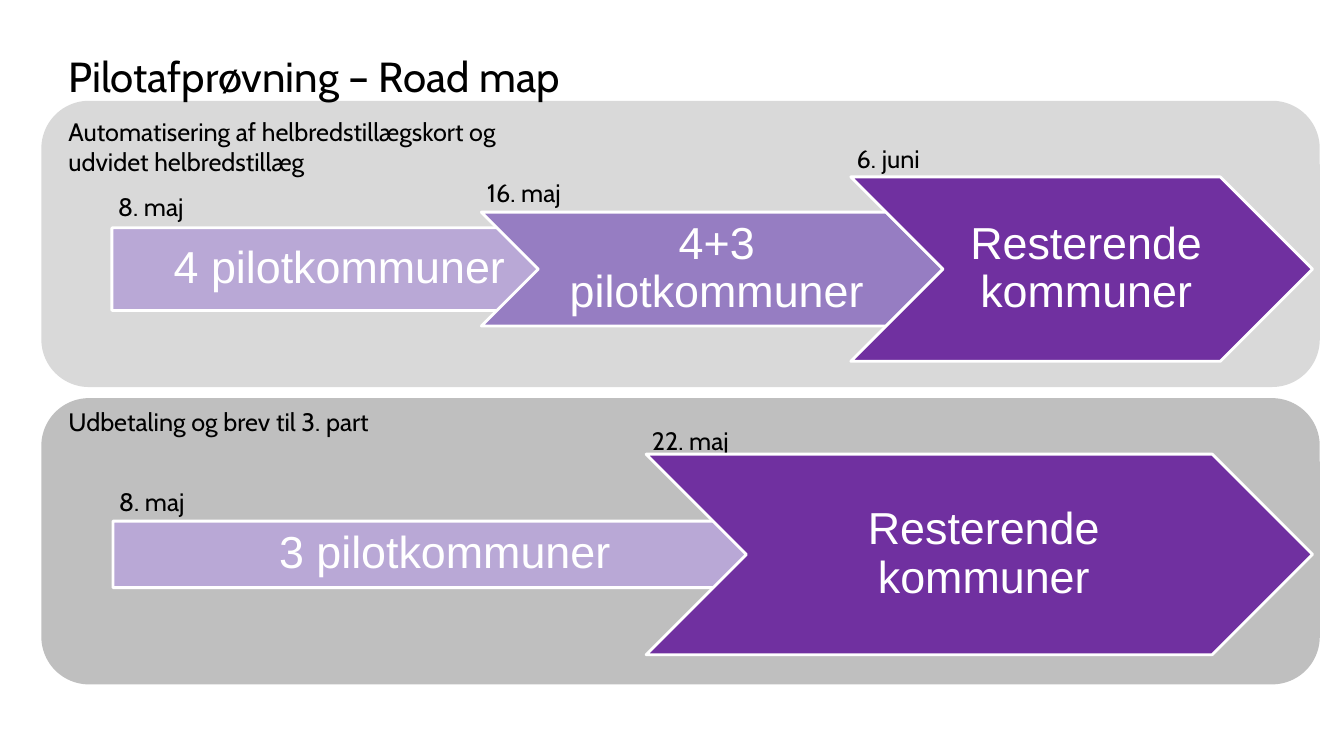
from dataclasses import dataclass

from pptx import Presentation
from pptx.dml.color import RGBColor
from pptx.enum.shapes import MSO_SHAPE as SHAPE
from pptx.enum.text import MSO_ANCHOR as ANCHOR, PP_ALIGN as ALIGN
from pptx.shapes.autoshape import Shape
from pptx.slide import Slide
from pptx.util import Inches, Pt

COLORS = {
    "black": "000000",
    "white": "FFFFFF",
    "light_gray": "D9D9D9",
    "gray": "BFBFBF",
    "lilac": "B9A8D6",
    "violet": "967DC2",
    "purple": "7030A0",
}
PANEL_LEFT, PANEL_W, PANEL_H = 0.41, 12.68, 2.84
STEP_RATIO = 0.8
DATE_SHIFT = -0.04


@dataclass
class Phase:
    text: str
    date: str
    date_top: float
    height: float
    color: str


@dataclass
class Track:
    title: str
    panel_top: float
    panel_color: str
    title_top: float
    title_h: float
    left: float
    middle: float
    phase_w: float
    phases: list[Phase]


TRACKS = [
    Track("Udbetaling og brev til 3. part", 3.95, "gray", 3.98, 0.4,
          1.12, 5.5, 6.61, [
              Phase("3 pilotkommuner", "8. maj", 4.78, 0.66, "lilac"),
              Phase("Resterende kommuner", "22. maj", 4.17, 1.99, "purple"),
          ]),
    Track("Automatisering af helbredstillægskort og udvidet helbredstillæg",
          1.0, "light_gray", 1.1, 0.71, 1.11, 2.67, 4.58, [
              Phase("4 pilotkommuner", "8. maj", 1.85, 0.82, "lilac"),
              Phase("4+3 pilotkommuner", "16. maj", 1.71, 1.13, "violet"),
              Phase("Resterende kommuner", "6. juni", 1.37, 1.83, "purple"),
          ]),
]


def rgb(name: str) -> RGBColor:
    return RGBColor.from_string(COLORS[name])


def style_text(sp: Shape, text: str, font: str, size: int, color: str) -> None:
    tf = sp.text_frame
    tf.word_wrap = True
    tf.text = text
    r = tf.paragraphs[0].runs[0]
    r.font.name = font
    r.font.size = Pt(size)
    r.font.color.rgb = rgb(color)


def add_label(s: Slide, text: str, left: float, top: float, width: float,
              height: float, size: int = 18) -> Shape:
    sp = s.shapes.add_textbox(*map(Inches, (left, top, width, height)))
    style_text(sp, text, "Cabin", size, "black")
    return sp


def add_block(s: Slide, kind: SHAPE, left: float, top: float, width: float,
              height: float, color: str) -> Shape:
    sp = s.shapes.add_shape(kind, *map(Inches, (left, top, width, height)))
    sp.shadow.inherit = False
    sp.fill.solid()
    sp.fill.fore_color.rgb = rgb(color)
    sp.line.fill.background()
    return sp


def add_phase(s: Slide, track: Track, index: int, phase: Phase) -> None:
    left = track.left + index * STEP_RATIO * track.phase_w
    add_label(s, phase.date, left + DATE_SHIFT, phase.date_top, 1.11, 0.4)
    kind = SHAPE.CHEVRON if index else SHAPE.PENTAGON
    sp = add_block(s, kind, left, track.middle - phase.height / 2,
                   track.phase_w, phase.height, phase.color)
    sp.line.color.rgb = rgb("white")
    sp.line.width = Pt(2)
    style_text(sp, phase.text, "Arial", 32, "white")
    tf = sp.text_frame
    tf.vertical_anchor = ANCHOR.MIDDLE
    tf.margin_left = Inches(0.14 if index else 0.19)
    tf.margin_right = Inches(0.05)
    tf.margin_top = tf.margin_bottom = Inches(0.09)
    p = tf.paragraphs[0]
    p.alignment = ALIGN.CENTER
    p.line_spacing = 0.9


def add_title(s: Slide) -> None:
    sp = add_label(s, "Pilotafprøvning – Road map", 0.68, 0.63, 11.92, 0.92, 30)
    tf = sp.text_frame
    tf.margin_left = tf.margin_right = tf.margin_top = tf.margin_bottom = 0
    tf.paragraphs[0].line_spacing = Pt(27)


def main() -> None:
    prs = Presentation()
    prs.slide_width, prs.slide_height = Inches(13.33), Inches(7.5)
    s = prs.slides.add_slide(prs.slide_layouts[6])
    for track in TRACKS:
        add_block(s, SHAPE.ROUNDED_RECTANGLE, PANEL_LEFT, track.panel_top,
                  PANEL_W, PANEL_H, track.panel_color)
        add_label(s, track.title, 0.58, track.title_top, 4.69, track.title_h)
        for index, phase in enumerate(track.phases):
            add_phase(s, track, index, phase)
    add_title(s)
    prs.save("out.pptx")


if __name__ == "__main__":
    main()
